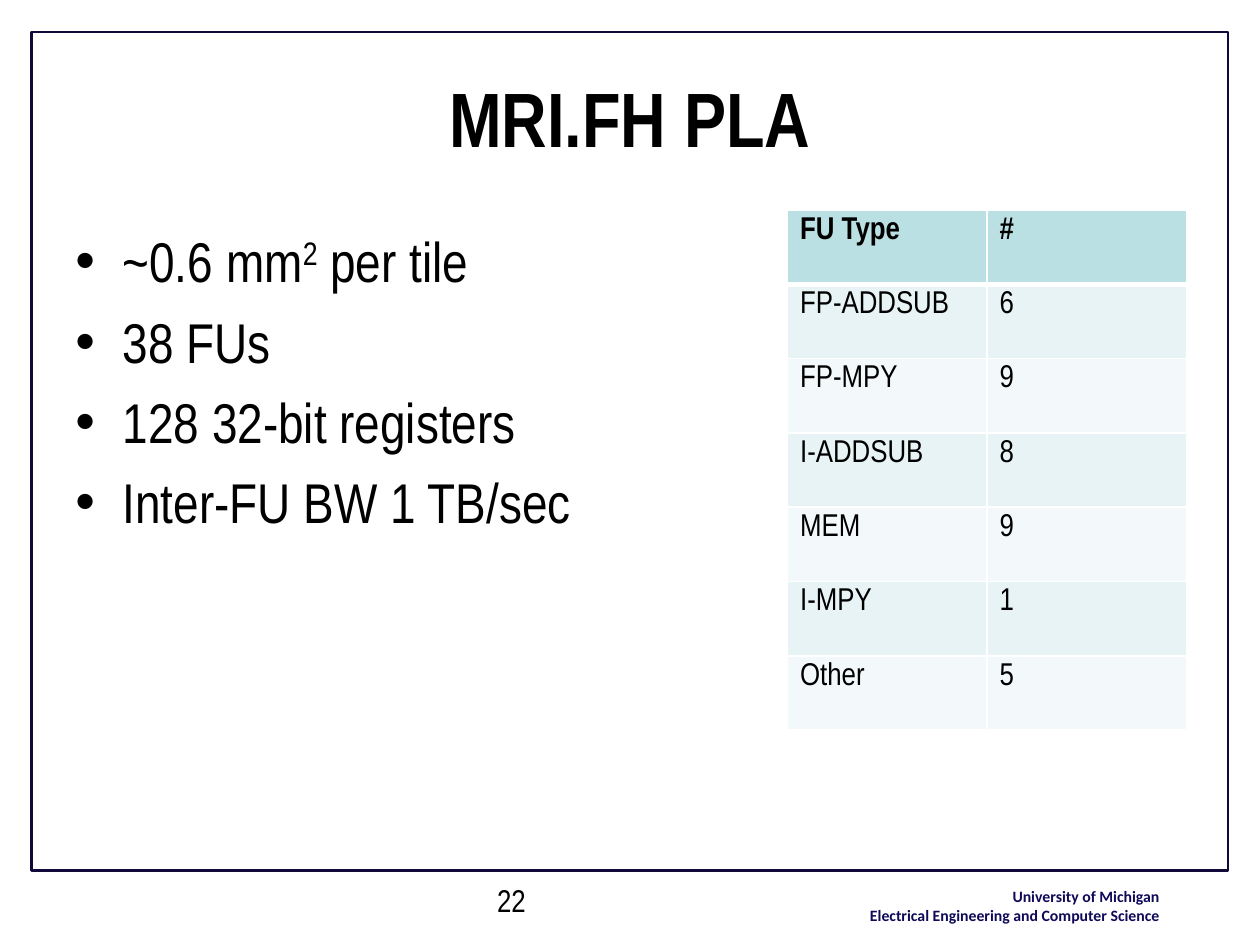
from dataclasses import dataclass

from lxml import etree
from pptx import Presentation
from pptx.dml.color import RGBColor
from pptx.enum.shapes import MSO_SHAPE
from pptx.enum.text import MSO_ANCHOR, PP_ALIGN
from pptx.oxml.ns import qn
from pptx.util import Pt

RECTANGLE = MSO_SHAPE.RECTANGLE
LEFT, CENTER, RIGHT = PP_ALIGN.LEFT, PP_ALIGN.CENTER, PP_ALIGN.RIGHT
TOP, MIDDLE = MSO_ANCHOR.TOP, MSO_ANCHOR.MIDDLE


@dataclass(frozen=True)
class Theme:
    font: str = "Arial Narrow"
    credit_font: str = "Calibri"
    ink: str = "000000"
    credit: str = "0F0958"
    frame: str = "10093A"
    header: str = "BBE0E3"
    bands: tuple = ("E7F3F4", "F3F9FA")
    grid: str = "FFFFFF"
    title_size: int = 44
    body_size: int = 32
    small_size: int = 18
    credit_size: int = 9


THEME = Theme()

# Each bullet is a list of (text, is superscript)
BULLETS = [
    [("~0.6 mm", False), ("2", True), (" per tile", False)],
    [("38 FUs", False)],
    [("128 32-bit registers", False)],
    [("Inter-FU BW 1 TB/sec", False)],
]
FU_COUNTS = [
    ("FU Type", "#"),
    ("FP-ADDSUB", "6"),
    ("FP-MPY", "9"),
    ("I-ADDSUB", "8"),
    ("MEM", "9"),
    ("I-MPY", "1"),
    ("Other", "5"),
]


def add_run(paragraph, text, size, bold=False, color=THEME.ink, font=THEME.font):
    run = paragraph.add_run()
    run.text = text
    run.font.size = Pt(size)
    run.font.bold = bold
    run.font.name = font
    run.font.color.rgb = RGBColor.from_string(color)
    return run


def add_text(slide, box, lines, size, align=LEFT, anchor=TOP, wrap=True, **style):
    frame = slide.shapes.add_textbox(*map(Pt, box)).text_frame
    frame.word_wrap = wrap
    frame.vertical_anchor = anchor
    for index, line in enumerate(lines):
        paragraph = frame.paragraphs[0] if index == 0 else frame.add_paragraph()
        paragraph.alignment = align
        add_run(paragraph, line, size, **style)


def add_bullets(slide, box, bullets):
    frame = slide.shapes.add_textbox(*map(Pt, box)).text_frame
    frame.word_wrap = True
    for index, parts in enumerate(bullets):
        paragraph = frame.paragraphs[0] if index == 0 else frame.add_paragraph()
        properties = paragraph._p.get_or_add_pPr()
        properties.set("marL", str(Pt(27)))
        properties.set("indent", str(-Pt(27)))
        etree.SubElement(properties, qn("a:buFont"), typeface="Arial")
        etree.SubElement(properties, qn("a:buChar"), char="•")
        if index:
            paragraph.space_before = Pt(7.5)
        for text, superscript in parts:
            run = add_run(paragraph, text, THEME.body_size)
            if superscript:
                run._r.get_or_add_rPr().set("baseline", "30000")


def add_frame(slide, box):
    border = slide.shapes.add_shape(RECTANGLE, *map(Pt, box))
    border.shadow.inherit = False
    border.fill.background()
    border.line.color.rgb = RGBColor.from_string(THEME.frame)
    border.line.width = Pt(1.25)


def set_borders(cell, widths):
    properties = cell._tc.get_or_add_tcPr()
    for side, width in widths.items():
        line = etree.SubElement(properties, qn(f"a:ln{side}"), w=str(Pt(width)))
        fill = etree.SubElement(line, qn("a:solidFill"))
        etree.SubElement(fill, qn("a:srgbClr"), val=THEME.grid)


def add_count_table(slide, box, rows):
    table = slide.shapes.add_table(len(rows), len(rows[0]), *map(Pt, box)).table
    for row_index, row in enumerate(rows):
        is_header = row_index == 0
        color = THEME.header if is_header else THEME.bands[(row_index - 1) % 2]
        widths = {"L": 1, "R": 1, "T": 3 if row_index == 1 else 1,
                  "B": 3 if is_header else 1}
        for column_index, text in enumerate(row):
            cell = table.cell(row_index, column_index)
            set_borders(cell, widths)
            cell.fill.solid()
            cell.fill.fore_color.rgb = RGBColor.from_string(color)
            add_run(cell.text_frame.paragraphs[0], text, THEME.small_size, is_header)


def main():
    deck = Presentation()
    deck.slide_width, deck.slide_height = Pt(720), Pt(540)
    slide = deck.slides.add_slide(deck.slide_layouts[6])

    # Footer and page frame
    add_text(slide, (460.8, 503.3, 208.8, 28.8),
             ["University of Michigan", "Electrical Engineering and Computer Science"],
             THEME.credit_size, align=RIGHT, wrap=False, bold=True,
             color=THEME.credit, font=THEME.credit_font)
    add_frame(slide, (18, 18.5, 684, 479))
    add_text(slide, (277, 500, 168, 31.5), ["22"], THEME.small_size)

    # Title and key figures
    add_text(slide, (36, 21.6, 648, 90), ["MRI.FH PLA"], THEME.title_size,
             align=CENTER, anchor=MIDDLE, bold=True)
    add_bullets(slide, (36, 126, 648, 356.4), BULLETS)

    # Functional unit counts
    add_count_table(slide, (450, 120, 228, 297.4), FU_COUNTS)

    deck.save("out.pptx")


if __name__ == "__main__":
    main()
